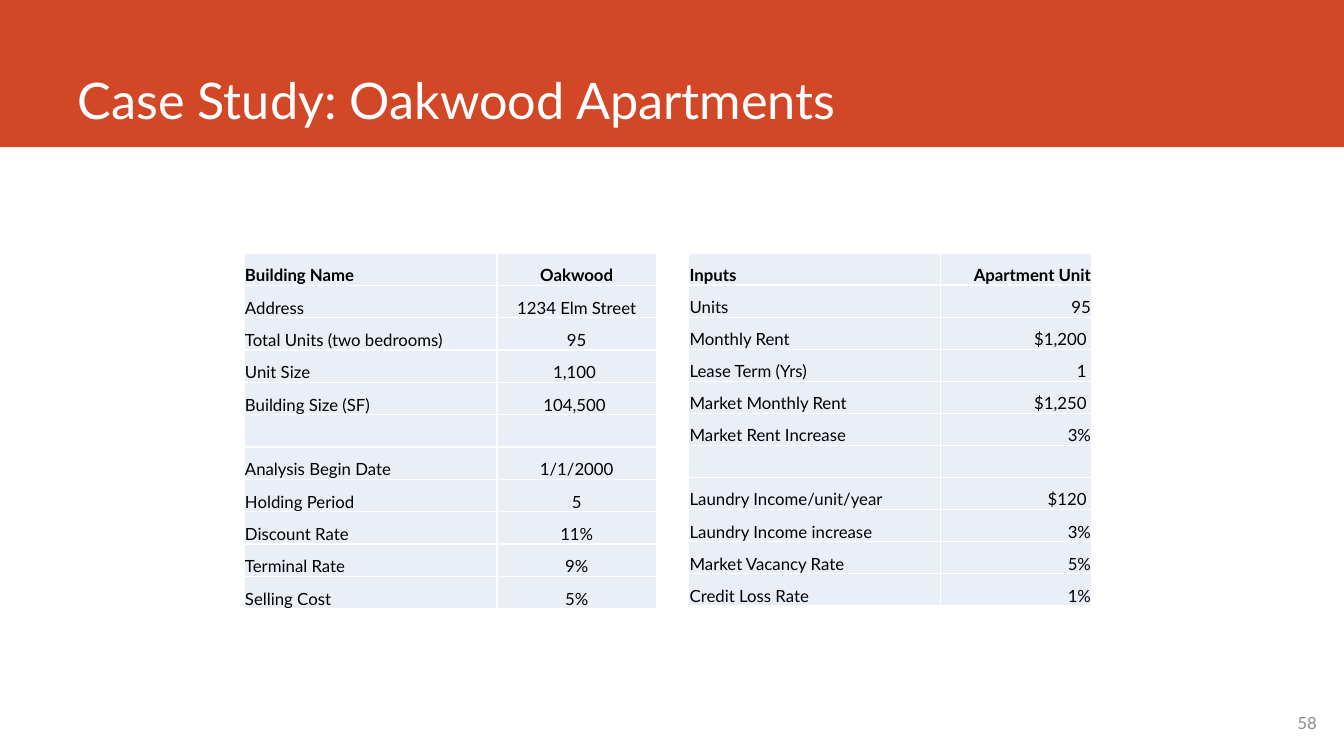
from lxml import etree
from pptx import Presentation
from pptx.dml.color import RGBColor
from pptx.enum import shapes, text
from pptx.oxml import ns
from pptx.util import Inches, Pt

LEFT, CENTER, RIGHT = text.PP_ALIGN.LEFT, text.PP_ALIGN.CENTER, text.PP_ALIGN.RIGHT
BOTTOM, MIDDLE = text.MSO_ANCHOR.BOTTOM, text.MSO_ANCHOR.MIDDLE


def write(tf, content, size=12, color="000000", bold=False, align=LEFT, anchor=BOTTOM):
    tf.word_wrap = True
    tf.vertical_anchor = anchor
    p = tf.paragraphs[0]
    p.alignment = align
    r = p.add_run()
    r.text = content
    r.font.name, r.font.size, r.font.bold = "Lato", Pt(size), bold
    r.font.color.rgb = RGBColor.from_string(color)


def add_borders(cell, color):
    """Give all four sides of the cell a 1 pt line."""
    tcPr = cell._tc.get_or_add_tcPr()
    for i, side in enumerate(("lnL", "lnR", "lnT", "lnB")):
        ln = etree.Element(ns.qn("a:" + side), w=str(Pt(1)))
        fill = etree.SubElement(ln, ns.qn("a:solidFill"))
        etree.SubElement(fill, ns.qn("a:srgbClr"), val=color)
        tcPr.insert(i, ln)


prs = Presentation()
prs.slide_width, prs.slide_height = Inches(13.33), Inches(7.5)
s = prs.slides.add_slide(prs.slide_layouts[5])

# Title on its banner
title = s.shapes.title
title.left, title.top = Inches(0.67), Inches(0)
title.width, title.height = Inches(11.75), Inches(1.34)
write(title.text_frame, "Case Study: Oakwood Apartments", size=36, color="FFFFFF")

banner = s.shapes.add_shape(shapes.MSO_SHAPE.RECTANGLE, 0, 0, prs.slide_width, Inches(1.46))
banner.shadow.inherit = False
banner.fill.solid()
banner.fill.fore_color.rgb = RGBColor.from_string("D24726")
banner.line.fill.background()
title.element.addprevious(banner.element)

# Tables
building = [
    ("Building Name", "Oakwood"),
    ("Address", "1234 Elm Street"),
    ("Total Units (two bedrooms)", "95"),
    ("Unit Size", "1,100 "),
    ("Building Size (SF)", "104,500 "),
    ("", ""),
    ("Analysis Begin Date", "1/1/2000"),
    ("Holding Period", "5"),
    ("Discount Rate", "11%"),
    ("Terminal Rate", "9%"),
    ("Selling Cost", "5%"),
]
inputs = [
    ("Inputs", "Apartment Unit"),
    ("Units", "95"),
    ("Monthly Rent", "$1,200 "),
    ("Lease Term (Yrs)", "1 "),
    ("Market Monthly Rent", "$1,250 "),
    ("Market Rent Increase", "3%"),
    ("", ""),
    ("Laundry Income/unit/year", "$120 "),
    ("Laundry Income increase", "3%"),
    ("Market Vacancy Rate", "5%"),
    ("Credit Loss Rate", "1%"),
]
tables = [
    (building, 2.42, (2.51, 1.58), 3.53, CENTER),
    (inputs, 6.83, (2.5, 1.5), 3.5, RIGHT),
]
for rows, left, widths, height, value_align in tables:
    frame = s.shapes.add_table(len(rows), 2, Inches(left), Inches(2.51),
                               Inches(sum(widths)), Inches(height))
    table = frame.table
    for column, width in zip(table.columns, widths):
        column.width = Inches(width)
    for i, row in enumerate(rows):
        for j, (content, align) in enumerate(zip(row, (LEFT, value_align))):
            cell = table.cell(i, j)
            cell.margin_left = cell.margin_top = cell.margin_right = Inches(0.01)
            cell.margin_bottom = 0
            cell.vertical_anchor = BOTTOM
            cell.fill.solid()
            cell.fill.fore_color.rgb = RGBColor.from_string("EAEFF7")
            add_borders(cell, "FFFFFF")
            if content:
                write(cell.text_frame, content, bold=i == 0, align=align, anchor=None)

# Slide number
number = s.shapes.add_textbox(Inches(10.83), Inches(6.91), Inches(2.33), Inches(0.52))
write(number.text_frame, "58", color="8C8C8C", align=RIGHT, anchor=MIDDLE)

prs.save("out.pptx")
